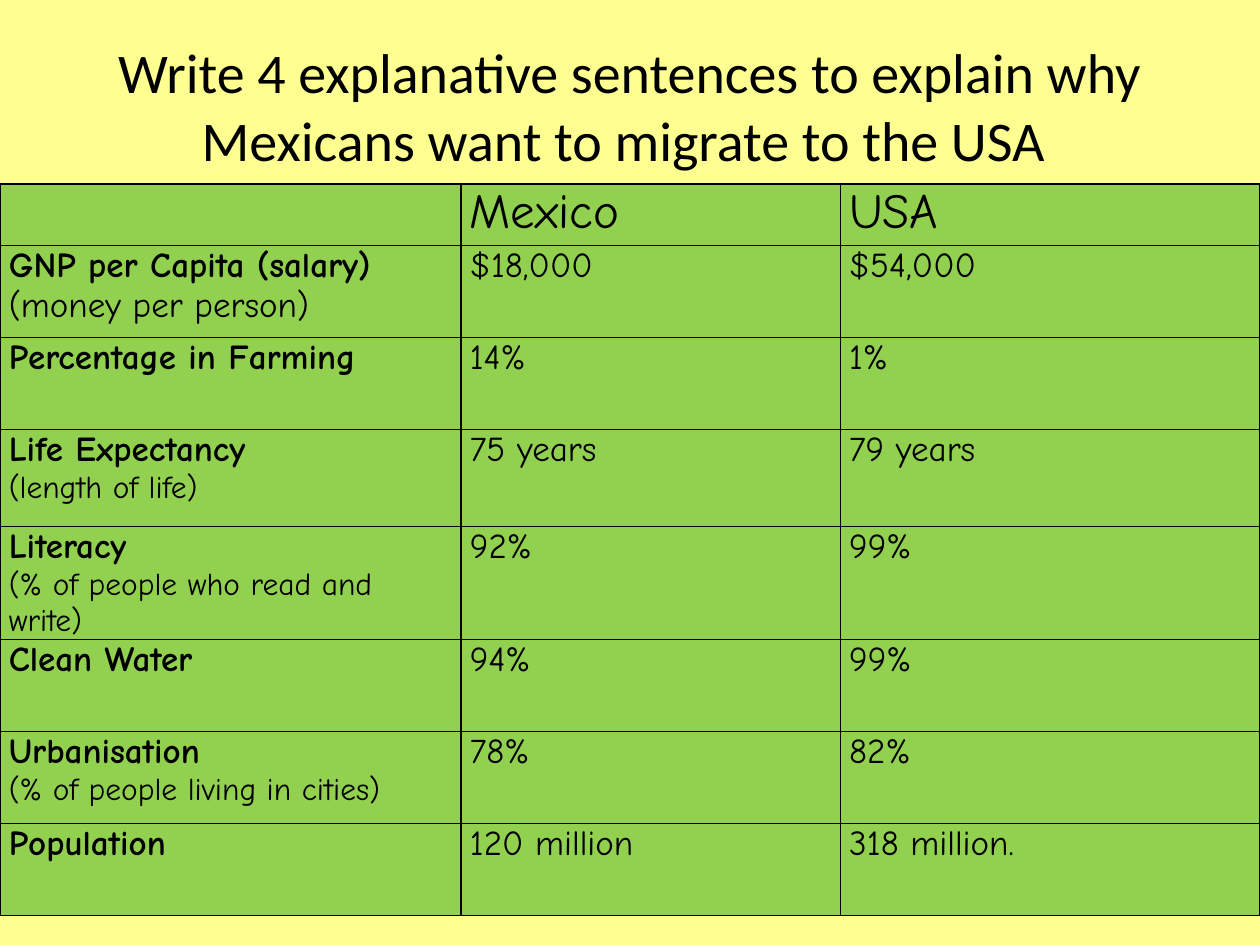
from dataclasses import dataclass
from lxml.etree import SubElement
from pptx import Presentation
from pptx.dml.color import RGBColor
from pptx.enum.text import MSO_ANCHOR, MSO_AUTO_SIZE, PP_ALIGN
from pptx.oxml.ns import qn
from pptx.util import Inches, Pt


@dataclass(frozen=True)
class Theme:
    back: str = "FFFF91"
    cell: str = "92D050"
    ink: str = "000000"
    head: str = "Calibri"
    body: str = "Comic Neue"
    title: int = 32
    top: int = 28
    main: int = 20
    note: int = 18
    rule: int = 1


THEME = Theme()
TITLE = "Write 4 explanative sentences to explain why Mexicans want to migrate to the USA "
COLS = (3.66, 3.01, 3.33)
HEAD, ROW, TALL = 0.49, 0.73, 0.77
FACTS = (
    ("GNP per Capita (salary)", "(money per person)", THEME.main, "$18,000", "$54,000", ROW),
    ("Percentage in Farming", "", THEME.note, "14%", "1%", ROW),
    ("Life Expectancy", "(length of life)", THEME.note, "75 years", "79 years", TALL),
    ("Literacy", "(% of people who read and write)", THEME.note, "92%", "99%", ROW),
    ("Clean Water", "", THEME.note, "94%", "99%", ROW),
    ("Urbanisation", "(% of people living in cities)", THEME.note, "78%", "82%", ROW),
    ("Population", "", THEME.note, "120 million", "318 million.", ROW),
)


def style(para, size, face=THEME.body, bold=False):
    for run in para.runs:
        font = run.font
        font.name, font.size, font.bold = face, Pt(size), bold
        font.color.rgb = RGBColor.from_string(THEME.ink)


def add_title(slide, wide, high):
    shape = slide.shapes.title
    shape.left, shape.top = int(wide * 0.05), Inches(0.21)
    shape.width, shape.height = int(wide * 0.9), high
    frame = shape.text_frame
    frame.text = TITLE
    frame.word_wrap = True
    frame.auto_size = MSO_AUTO_SIZE.NONE
    frame.vertical_anchor = MSO_ANCHOR.MIDDLE
    para = frame.paragraphs[0]
    para.alignment = PP_ALIGN.CENTER
    style(para, THEME.title, THEME.head)


def add_rules(cell):
    props = cell._tc.get_or_add_tcPr()
    for side in ("a:lnL", "a:lnR", "a:lnT", "a:lnB"):
        line = SubElement(props, qn(side), w=str(Pt(THEME.rule)))
        fill = SubElement(line, qn("a:solidFill"))
        SubElement(fill, qn("a:srgbClr"), val=THEME.ink)


def set_cell(cell, lines):
    cell.margin_left = cell.margin_right = Inches(0.07)
    cell.margin_top = cell.margin_bottom = 0
    add_rules(cell)
    cell.fill.solid()
    cell.fill.fore_color.rgb = RGBColor.from_string(THEME.cell)
    frame = cell.text_frame
    for num, (text, size, bold) in enumerate(lines):
        para = frame.add_paragraph() if num else frame.paragraphs[0]
        para.text = text
        style(para, size, bold=bold)


def label(name, note, size):
    lines = [(name, THEME.main, True)]
    return lines + [(note, size, False)] if note else lines


def add_facts(slide, wide, top):
    highs = [HEAD] + [fact[-1] for fact in FACTS]
    table = slide.shapes.add_table(
        len(highs), len(COLS), 0, top, wide, Inches(sum(highs))
    ).table
    table.first_row = table.horz_banding = False
    for col, width in zip(table.columns, COLS):
        col.width = Inches(width)
    for row, high in zip(table.rows, highs):
        row.height = Inches(high)
    grid = [[[]] + [[(name, THEME.top, False)] for name in ("Mexico", "USA")]]
    for name, note, size, *vals, high in FACTS:
        grid.append([label(name, note, size)] + [[(val, THEME.main, False)] for val in vals])
    for row, items in zip(table.rows, grid):
        for cell, lines in zip(row.cells, items):
            set_cell(cell, lines)


def main():
    deck = Presentation()
    deck.slide_width, deck.slide_height = Inches(10), Inches(7.5)
    slide = deck.slides.add_slide(deck.slide_layouts[5])
    fill = slide.background.fill
    fill.solid()
    fill.fore_color.rgb = RGBColor.from_string(THEME.back)
    add_title(slide, deck.slide_width, deck.slide_height // 6)
    add_facts(slide, deck.slide_width, Inches(1.46))
    deck.save("out.pptx")


if __name__ == "__main__":
    main()
